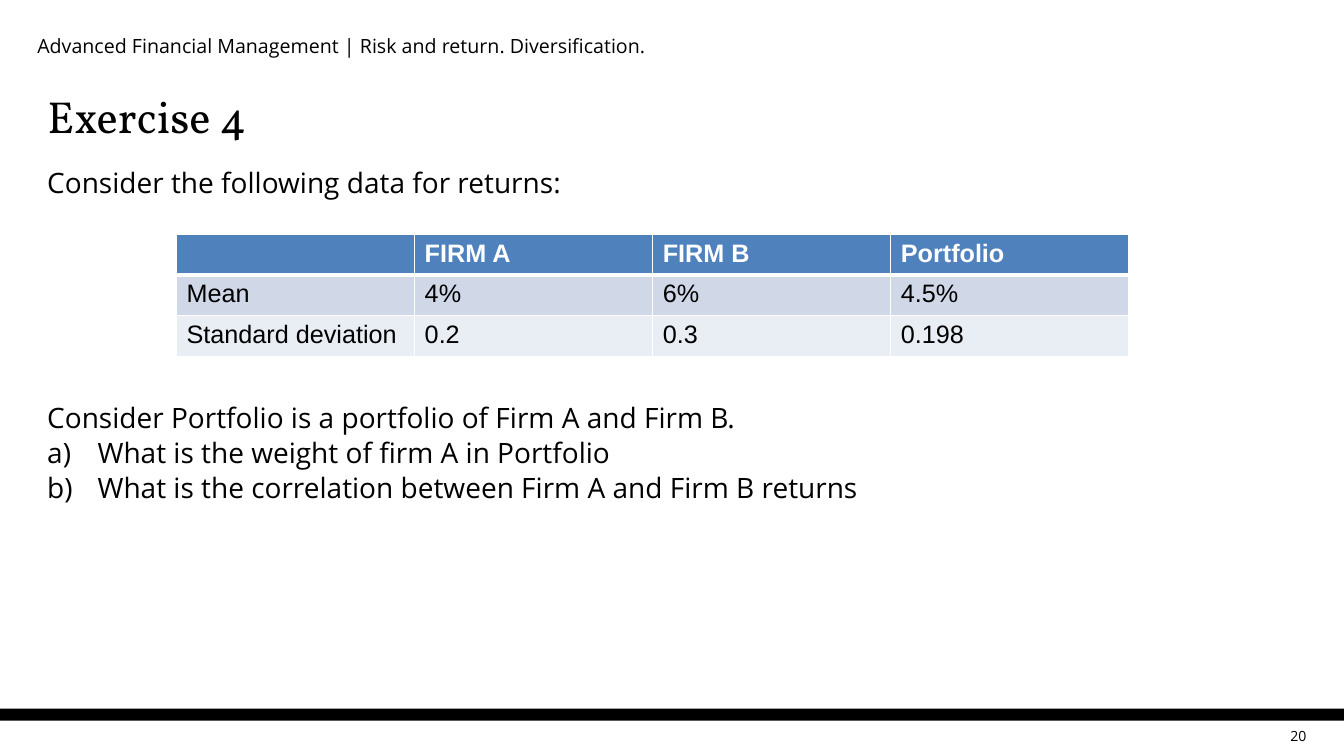
import pptx
import pptx.util
import pptx.dml.color
import pptx.enum.shapes
import pptx.enum.text
import pptx.oxml.ns
from lxml import etree

Cm = pptx.util.Cm
Pt = pptx.util.Pt
Align = pptx.enum.text.PP_ALIGN
Anchor = pptx.enum.text.MSO_ANCHOR
qn = pptx.oxml.ns.qn

COLOURS = {
    "ink": "000000",
    "paper": "FFFFFF",
    "header": "4F81BD",
    "band": "D0D8E8",
    "pale": "E9EDF4",
}
WIDTH, HEIGHT = 33.87, 19.05
LEFT, TEXT_WIDTH = 0.94, 32


class SlideBuilder:
    body_font = "Open Sans"
    title_font = "Vollkorn"
    table_font = "Arial"

    def __init__(self, deck):
        self.page = deck.slides.add_slide(deck.slide_layouts[5])

    def colour(self, name):
        return pptx.dml.color.RGBColor.from_string(COLOURS[name])

    def add_span(self, para, text, font, size, colour="ink", bold=False):
        span = para.add_run()
        span.text = text
        span.font.name = font
        span.font.size = Pt(size)
        span.font.bold = bold
        span.font.color.rgb = self.colour(colour)

    def number(self, para):
        properties = para._p.get_or_add_pPr()
        properties.set("marL", str(Cm(1.27)))
        properties.set("indent", str(-Cm(1.27)))
        etree.SubElement(properties, qn("a:buFont"), typeface="+mj-lt")
        etree.SubElement(properties, qn("a:buAutoNum"), type="alphaLcParenR")

    def title(self, text, left, top, width, height):
        box = self.page.shapes.title
        box.left, box.top, box.width, box.height = map(Cm, (left, top, width, height))
        frame = box.text_frame
        frame.auto_size = pptx.enum.text.MSO_AUTO_SIZE.NONE
        frame.vertical_anchor = Anchor.BOTTOM
        para = frame.paragraphs[0]
        para.alignment = Align.JUSTIFY
        self.add_span(para, text, self.title_font, 32)

    def text(self, lines, left, top, width, height, size=20, align=Align.JUSTIFY,
             anchor=Anchor.TOP, inset=True, numbered_from=None):
        box = self.page.shapes.add_textbox(*map(Cm, (left, top, width, height)))
        frame = box.text_frame
        frame.word_wrap = True
        frame.vertical_anchor = anchor
        if not inset:
            frame.margin_left = frame.margin_right = 0
            frame.margin_top = frame.margin_bottom = 0
        for index, line in enumerate(lines):
            para = frame.add_paragraph() if index else frame.paragraphs[0]
            if numbered_from is not None and index >= numbered_from:
                self.number(para)
            para.alignment = align
            para.space_before = Pt(1 if index else 0)
            self.add_span(para, line, self.body_font, size)

    def bar(self, left, top, width, height):
        bar = self.page.shapes.add_shape(
            pptx.enum.shapes.MSO_SHAPE.RECTANGLE, *map(Cm, (left, top, width, height)))
        bar.shadow.inherit = False
        bar.fill.solid()
        bar.fill.fore_color.rgb = self.colour("ink")
        bar.line.fill.background()

    def borders(self, cell, bottom):
        properties = cell._tc.get_or_add_tcPr()
        widths = {"a:lnL": 1, "a:lnR": 1, "a:lnT": 1, "a:lnB": bottom}
        for position, (side, width) in enumerate(widths.items()):
            line = etree.Element(qn(side), w=str(Pt(width)))
            fill = etree.SubElement(line, qn("a:solidFill"))
            etree.SubElement(fill, qn("a:srgbClr"), val=COLOURS["paper"])
            properties.insert(position, line)

    def table(self, rows, left, top, column_width, row_height):
        columns = len(rows[0])
        table = self.page.shapes.add_table(
            len(rows), columns, Cm(left), Cm(top),
            Cm(column_width * columns), Cm(row_height * len(rows))).table
        table.horz_banding = False
        for row_index, values in enumerate(rows):
            header = row_index == 0
            fill = ("header", "band", "pale")[row_index]
            for column_index, value in enumerate(values):
                cell = table.cell(row_index, column_index)
                cell.fill.solid()
                cell.fill.fore_color.rgb = self.colour(fill)
                self.borders(cell, 3 if header else 1)
                if value:
                    self.add_span(cell.text_frame.paragraphs[0], value, self.table_font,
                                  18, "paper" if header else "ink", header)


def main():
    deck = pptx.Presentation()
    deck.slide_width, deck.slide_height = Cm(WIDTH), Cm(HEIGHT)
    slide = SlideBuilder(deck)
    slide.text(["20"], 31.6, 18.24, 1.32, 0.6, size=10, align=Align.RIGHT,
               anchor=Anchor.MIDDLE, inset=False)
    slide.bar(0, 17.86, WIDTH, 0.3)
    slide.title("Exercise 4", LEFT, 1.78, TEXT_WIDTH, 1.93)
    slide.text(["Consider the following data for returns:"],
               LEFT, 4.04, TEXT_WIDTH, 1.3)
    slide.text(["Consider Portfolio is a portfolio of Firm A and Firm B.",
                "What is the weight of firm A in Portfolio",
                "What is the correlation between Firm A and Firm B returns"],
               LEFT, 9.98, TEXT_WIDTH, 3.4, numbered_from=1)
    slide.text(["Advanced Financial Management | Risk and return. Diversification."],
               LEFT, 0.69, TEXT_WIDTH, 0.9, size=14, anchor=Anchor.MIDDLE, inset=False)
    slide.table([["", "FIRM A", "FIRM B", "Portfolio"],
                 ["Mean", "4%", "6%", "4.5%"],
                 ["Standard deviation", "0.2", "0.3", "0.198"]],
                4.45, 5.9, 6, 1.03)
    deck.save("out.pptx")


if __name__ == "__main__":
    main()
